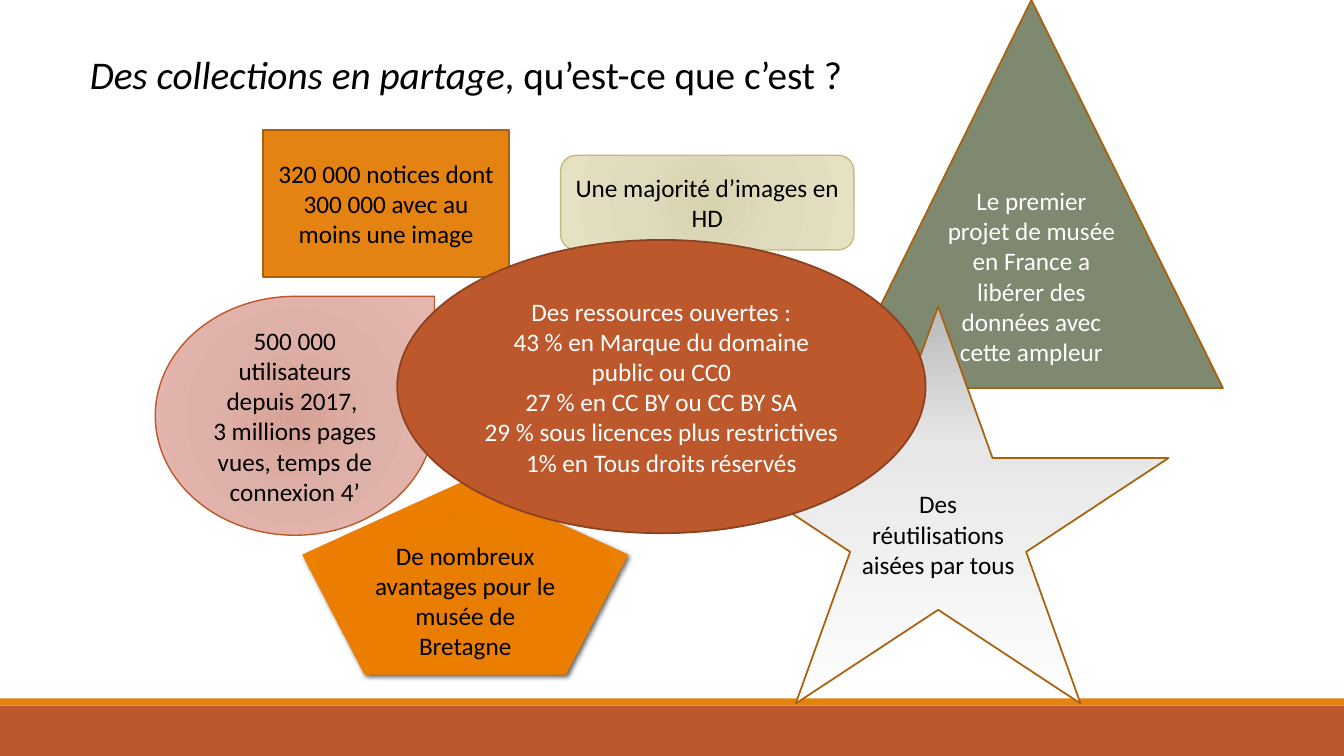
import pptx
import pptx.dml.color
import pptx.enum.shapes
import pptx.enum.text
import pptx.oxml
import pptx.oxml.ns
import pptx.util

Inches = pptx.util.Inches
Pt = pptx.util.Pt
SHAPES = pptx.enum.shapes.MSO_SHAPE
TEXT = pptx.enum.text
RADIAL = ('<a:path path="circle"><a:fillToRect l="100000" t="100000" '
          'r="100000" b="100000"/></a:path>')
UPWARD = '<a:lin ang="16200000" scaled="0"/>'


def color(value):
    return pptx.dml.color.RGBColor.from_string(value)


def drawing_xml(tag, attributes, content):
    namespace = pptx.oxml.ns.nsdecls("a")
    return pptx.oxml.parse_xml(f"<a:{tag} {namespace} {attributes}>{content}</a:{tag}>")


class Page:
    font = "Calibri"
    title_size = 28
    text_size = 18

    def __init__(self, deck):
        self.slide = deck.slides.add_slide(deck.slide_layouts[5])

    def style(self, para, size, ink, align):
        para.alignment = align
        para.font.name = self.font
        para.font.size = Pt(size)
        para.font.color.rgb = color(ink)

    def title(self, left, top, width, height, italic, plain):
        box = self.slide.shapes.title
        box.left, box.top = Inches(left), Inches(top)
        box.width, box.height = Inches(width), Inches(height)
        frame = box.text_frame
        frame.word_wrap = True
        frame.auto_size = TEXT.MSO_AUTO_SIZE.NONE
        frame.vertical_anchor = TEXT.MSO_ANCHOR.TOP
        para = frame.paragraphs[0]
        self.style(para, self.title_size, "000000", TEXT.PP_ALIGN.LEFT)
        for words, slanted in ((italic, True), (plain, False)):
            span = para.add_run()
            span.text = words
            span.font.italic = slanted

    def shape(self, kind, left, top, width, height, fill=None, line=None, weight=1.25):
        box = self.slide.shapes.add_shape(
            kind, Inches(left), Inches(top), Inches(width), Inches(height))
        box.shadow.inherit = False
        if fill:
            box.fill.solid()
            box.fill.fore_color.rgb = color(fill)
        if line:
            box.line.color.rgb = color(line)
            box.line.width = Pt(weight)
        else:
            box.line.fill.background()
        return box

    def gradient(self, box, stops, direction):
        marks = "".join(
            f'<a:gs pos="{place * 1000}"><a:srgbClr val="{shade}"/></a:gs>'
            for place, shade in stops)
        fill = drawing_xml("gradFill", 'rotWithShape="1"',
                           f"<a:gsLst>{marks}</a:gsLst>{direction}")
        box.element.spPr.find(pptx.oxml.ns.qn("a:prstGeom")).addnext(fill)

    def cast_shadow(self, box):
        effects = box.element.spPr.find(pptx.oxml.ns.qn("a:effectLst"))
        effects.append(drawing_xml(
            "outerShdw",
            f'blurRad="{Pt(3.5)}" dist="{Pt(2)}" dir="2700000" rotWithShape="0"',
            '<a:srgbClr val="000000"><a:alpha val="60000"/></a:srgbClr>'))

    def text(self, box, lines, ink="000000", bottom=0.05):
        frame = box.text_frame
        frame.word_wrap = True
        frame.vertical_anchor = TEXT.MSO_ANCHOR.MIDDLE
        frame.margin_bottom = Inches(bottom)
        for index, words in enumerate(lines):
            para = frame.add_paragraph() if index else frame.paragraphs[0]
            para.text = words
            self.style(para, self.text_size, ink, TEXT.PP_ALIGN.CENTER)


def main():
    deck = pptx.Presentation()
    deck.slide_width, deck.slide_height = Inches(13.33), Inches(7.5)
    page = Page(deck)
    page.shape(SHAPES.RECTANGLE, 0, 7, 13.33, 0.5, "BD582C")
    page.shape(SHAPES.RECTANGLE, 0, 6.93, 13.33, 0.07, "E48312")
    page.title(0.79, 0.45, 8.98, 3.3,
               "Des collections en partage", ", qu’est-ce que c’est ?")

    records = page.shape(SHAPES.RECTANGLE, 2.61, 1.29, 2.44, 1.46, "E48312", "A9610D")
    page.text(records, ["320 000 notices dont 300 000 avec au moins une image"])

    images = page.shape(SHAPES.ROUNDED_RECTANGLE, 5.56, 1.54, 2.91, 0.94,
                        line="C2BC80", weight=1)
    page.gradient(images, [(0, "D7D3AF"), (45, "DFDBBD"), (100, "E5E1C1")], RADIAL)
    page.text(images, ["Une majorité d’images en HD"])

    pioneer = page.shape(SHAPES.ISOSCELES_TRIANGLE, 8.33, 0, 3.8, 3.85, "7E8970", "A9610D")
    page.text(pioneer, ["Le premier projet de musée en France a libérer des données "
                        "avec cette ampleur"], "FFFFFF", bottom=0.35)

    users = page.shape(SHAPES.TEAR, 1.54, 2.94, 2.77, 2.37, line="BD582C", weight=1)
    page.gradient(users, [(0, "D7A197"), (45, "DEB1A8"), (100, "E6B7AE")], RADIAL)
    page.text(users, ["500 000 utilisateurs depuis 2017, ",
                      "3 millions pages vues, temps de connexion 4’"])

    benefits = page.shape(SHAPES.REGULAR_PENTAGON, 3, 4.77, 3.23, 1.92)
    page.gradient(benefits, [(0, "E57B00"), (34, "E87D00"), (70, "EB7E00"),
                             (100, "EF8407")], RADIAL)
    page.cast_shadow(benefits)
    page.text(benefits, ["De nombreux avantages pour le musée de Bretagne"])

    reuse = page.shape(SHAPES.STAR_5_POINT, 7.02, 3.04, 4.57, 3.94, line="A9610D")
    page.gradient(reuse, [(0, "FEFEFE"), (65, "E7E7E7"), (100, "B9B9B9")], UPWARD)
    page.text(reuse, ["Des réutilisations aisées par tous"])

    licences = page.shape(SHAPES.OVAL, 3.94, 2.38, 5.24, 2.91, "BD582C", "8C4121")
    page.text(licences, ["Des ressources ouvertes :",
                         "43 % en Marque du domaine public ou CC0",
                         "27 % en CC BY ou CC BY SA",
                         "29 % sous licences plus restrictives",
                         "1% en Tous droits réservés"], "FFFFFF")
    deck.save("out.pptx")


if __name__ == "__main__":
    main()
